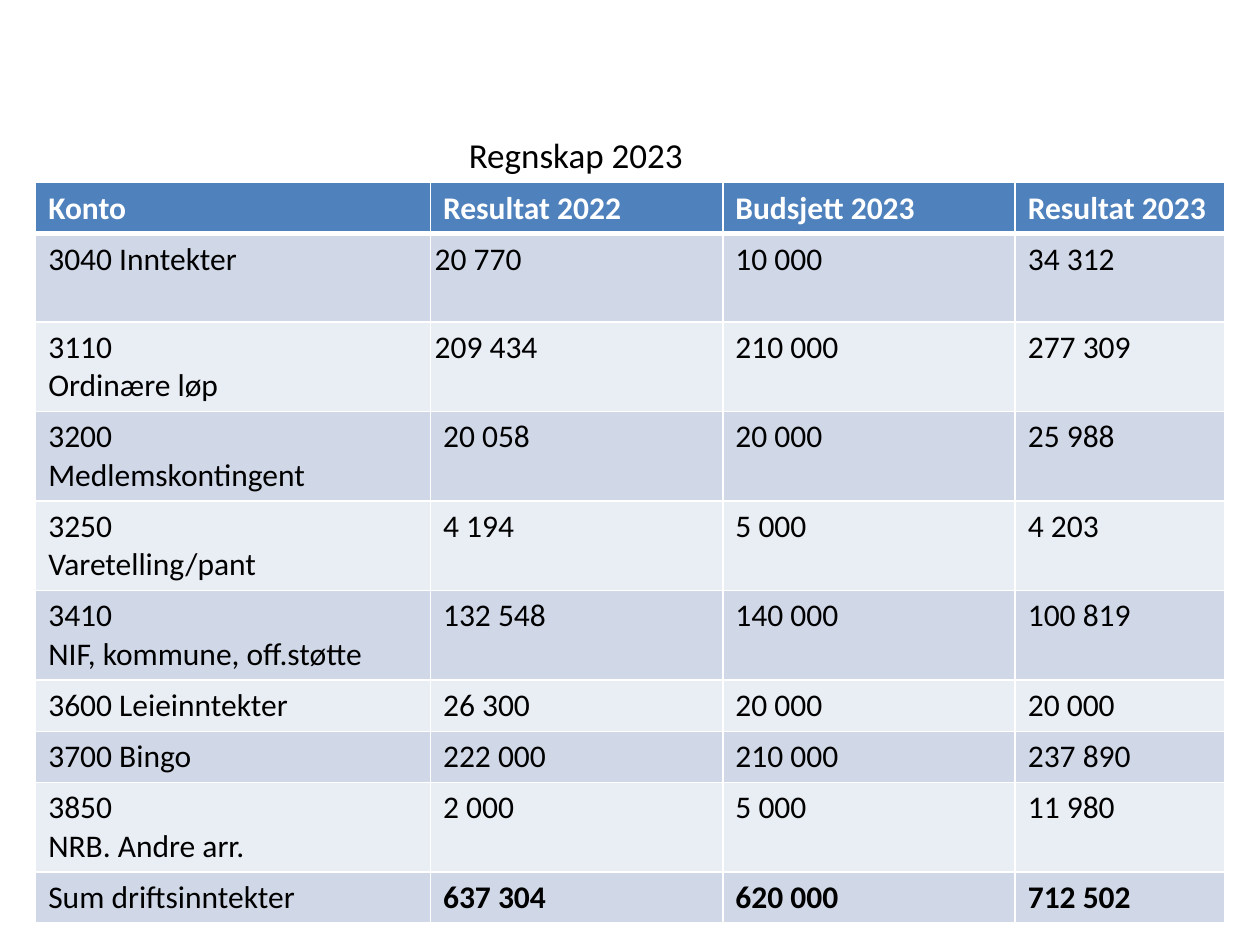
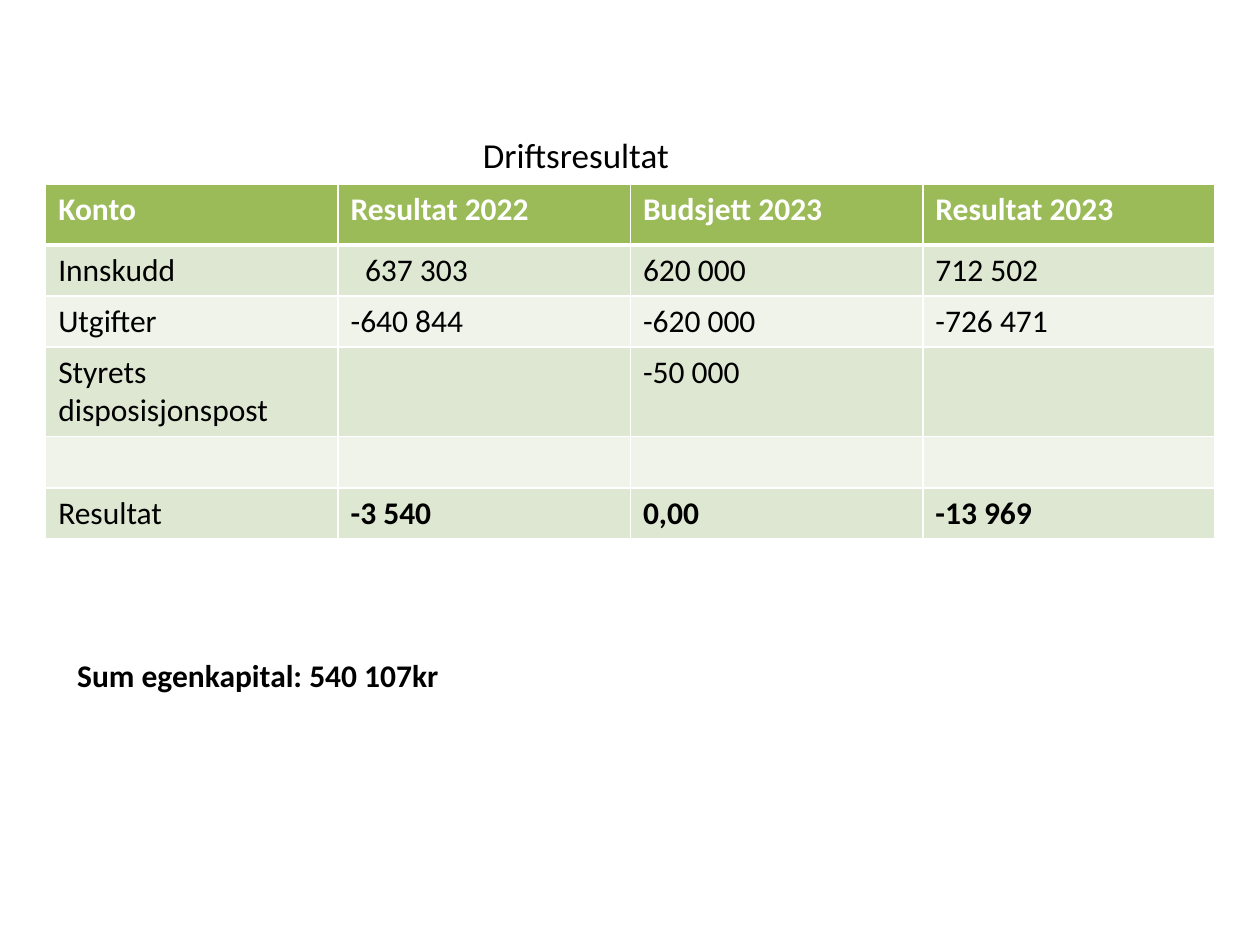
from dataclasses import dataclass

from lxml import etree
from pptx import Presentation
from pptx.dml.color import RGBColor
from pptx.enum.text import MSO_ANCHOR, MSO_AUTO_SIZE, PP_ALIGN
from pptx.oxml.ns import qn
from pptx.util import Pt

TOP, NO_FIT = MSO_ANCHOR.TOP, MSO_AUTO_SIZE.NONE
LEFT, CENTER = PP_ALIGN.LEFT, PP_ALIGN.CENTER

WHITE = RGBColor(0xFF, 0xFF, 0xFF)
BLACK = RGBColor(0x00, 0x00, 0x00)
BLUE = RGBColor(0x4F, 0x81, 0xBD)
BLUE_MID = RGBColor(0xD0, 0xD8, 0xE8)
BLUE_PALE = RGBColor(0xE9, 0xED, 0xF4)
GREEN = RGBColor(0x9B, 0xBB, 0x59)
GREEN_MID = RGBColor(0xDE, 0xE7, 0xD1)
GREEN_PALE = RGBColor(0xEF, 0xF3, 0xEA)

FONT = "Calibri"
INSET, TIGHT_INSET, WIDE_INSET = 7.2, 2.4, 15.4
ONE_LINE, TWO_LINES = 28.8, 50.4
THIN, THICK = 1, 3
HEADINGS = ("Konto", "Resultat 2022", "Budsjett 2023", "Resultat 2023")


@dataclass(frozen=True)
class Palette:
    """Colours of the heading row and the two alternating bands."""
    heading: RGBColor
    bands: tuple[RGBColor, RGBColor]


@dataclass(frozen=True)
class Account:
    """One account row, with the left inset of its first amount."""
    name: str
    amounts: tuple[str, str, str]
    height: float = ONE_LINE
    inset: float = INSET


@dataclass(frozen=True)
class Statement:
    """A titled table of accounts whose last row holds the totals."""
    title: str
    left: float
    top: float
    widths: tuple[float, ...]
    heading_height: float
    palette: Palette
    accounts: tuple[Account, ...]


INCOME = Statement(
    "Regnskap 2023", 20.4, 104.4, (225.6, 167.1, 167.1, 119.9), ONE_LINE,
    Palette(BLUE, (BLUE_MID, BLUE_PALE)),
    (
        Account("3040 Inntekter", ("20 770", "10 000", "34 312"), TWO_LINES, TIGHT_INSET),
        Account("3110\nOrdinære løp", ("209 434", "210 000", "277 309"), TWO_LINES, TIGHT_INSET),
        Account("3200\nMedlemskontingent", ("20 058", "20 000", "25 988"), TWO_LINES),
        Account("3250\nVaretelling/pant", ("4 194", "5 000", "4 203"), TWO_LINES),
        Account("3410\nNIF, kommune, off.støtte", ("132 548", "140 000", "100 819"), TWO_LINES),
        Account("3600 Leieinntekter", ("26 300", "20 000", "20 000")),
        Account("3700 Bingo", ("222 000", "210 000", "237 890")),
        Account("3850\nNRB. Andre arr.", ("2 000", "5 000", "11 980"), TWO_LINES),
        Account("Sum driftsinntekter", ("637 304", "620 000", "712 502")),
    ),
)

RESULT = Statement(
    "Driftsresultat", 26.1, 105.4, (167.1,) * 4, 34.6,
    Palette(GREEN, (GREEN_MID, GREEN_PALE)),
    (
        Account("Innskudd", ("637 303", "620 000", "712 502"), inset=WIDE_INSET),
        Account("Utgifter", ("-640 844", "-620 000", "-726 471")),
        Account("Styrets disposisjonspost", ("", "-50 000", ""), TWO_LINES),
        Account("", ("", "", "")),
        Account("Resultat", ("-3 540", "0,00", "-13 969")),
    ),
)


def write(tf, text: str, *, size: float = 18, color: RGBColor = BLACK,
          bold: bool = False, align=LEFT) -> None:
    """Write each line of text as a formatted paragraph."""
    for i, line in enumerate(text.split("\n")):
        p = tf.add_paragraph() if i else tf.paragraphs[0]
        p.alignment = align
        if line:
            r = p.add_run()
            r.text = line
            r.font.name, r.font.size, r.font.bold = FONT, Pt(size), bold
            r.font.color.rgb = color


def set_borders(cell, top: float, bottom: float) -> None:
    """Give a cell white borders with the given top and bottom widths."""
    tc_pr = cell._tc.get_or_add_tcPr()
    for side, width in (("L", THIN), ("R", THIN), ("T", top), ("B", bottom)):
        ln = etree.SubElement(tc_pr, qn(f"a:ln{side}"), w=str(Pt(width)))
        fill = etree.SubElement(ln, qn("a:solidFill"))
        etree.SubElement(fill, qn("a:srgbClr"), val=str(WHITE))


def add_grid(s, left: float, top: float, widths: tuple[float, ...], heights: list[float]):
    """Add an unbanded table with the given column widths and row heights."""
    table = s.shapes.add_table(len(heights), len(widths), Pt(left), Pt(top),
                               Pt(sum(widths)), Pt(sum(heights))).table
    table.horz_banding = False
    for column, width in zip(table.columns, widths):
        column.width = Pt(width)
    for row, height in zip(table.rows, heights):
        row.height = Pt(height)
    return table


def fill_cell(cell, text: str, *, fill: RGBColor | None = None, inset: float = INSET,
              top: float = THIN, bottom: float = THIN, **fmt) -> None:
    """Set the borders, fill, inset and text of a cell."""
    set_borders(cell, top, bottom)
    if fill is None:
        cell.fill.background()
    else:
        cell.fill.solid()
        cell.fill.fore_color.rgb = fill
    cell.margin_left = Pt(inset)
    write(cell.text_frame, text, **fmt)


def add_title(s, text: str) -> None:
    """Place and format the slide title."""
    sp = s.shapes.title
    sp.left, sp.top, sp.width, sp.height = Pt(201.6), Pt(72.7), Pt(254.9), Pt(31.7)
    tf = sp.text_frame
    tf.auto_size, tf.vertical_anchor, tf.word_wrap = NO_FIT, TOP, True
    write(tf, text, size=20, align=CENTER)


def add_statement(prs, statement: Statement):
    """Add a slide with the title and table of a statement."""
    s = prs.slides.add_slide(prs.slide_layouts[5])
    add_title(s, statement.title)
    accounts, palette = statement.accounts, statement.palette
    heights = [statement.heading_height, *(a.height for a in accounts)]
    table = add_grid(s, statement.left, statement.top, statement.widths, heights)
    for col, heading in enumerate(HEADINGS):
        fill_cell(table.cell(0, col), heading, fill=palette.heading, bottom=THICK,
                  color=WHITE, bold=True)
    for row, account in enumerate(accounts, 1):
        for col, text in enumerate((account.name, *account.amounts)):
            fill_cell(table.cell(row, col), text, fill=palette.bands[(row - 1) % 2],
                      inset=account.inset if col == 1 else INSET,
                      top=THICK if row == 1 else THIN,
                      bold=row == len(accounts) and col > 0)
    return s


def add_equity(s) -> None:
    """Add the unfilled equity row below the result."""
    table = add_grid(s, 36.9, 372.2, (487.6, 169.4), [ONE_LINE])
    for col, text in enumerate(("Sum egenkapital: 540 107kr", "")):
        fill_cell(table.cell(0, col), text, bottom=THICK, bold=True)


def main() -> None:
    """Build and save the presentation."""
    prs = Presentation()
    prs.slide_width, prs.slide_height = Pt(720), Pt(540)
    add_statement(prs, INCOME)
    add_equity(add_statement(prs, RESULT))
    prs.save("out.pptx")


if __name__ == "__main__":
    main()
